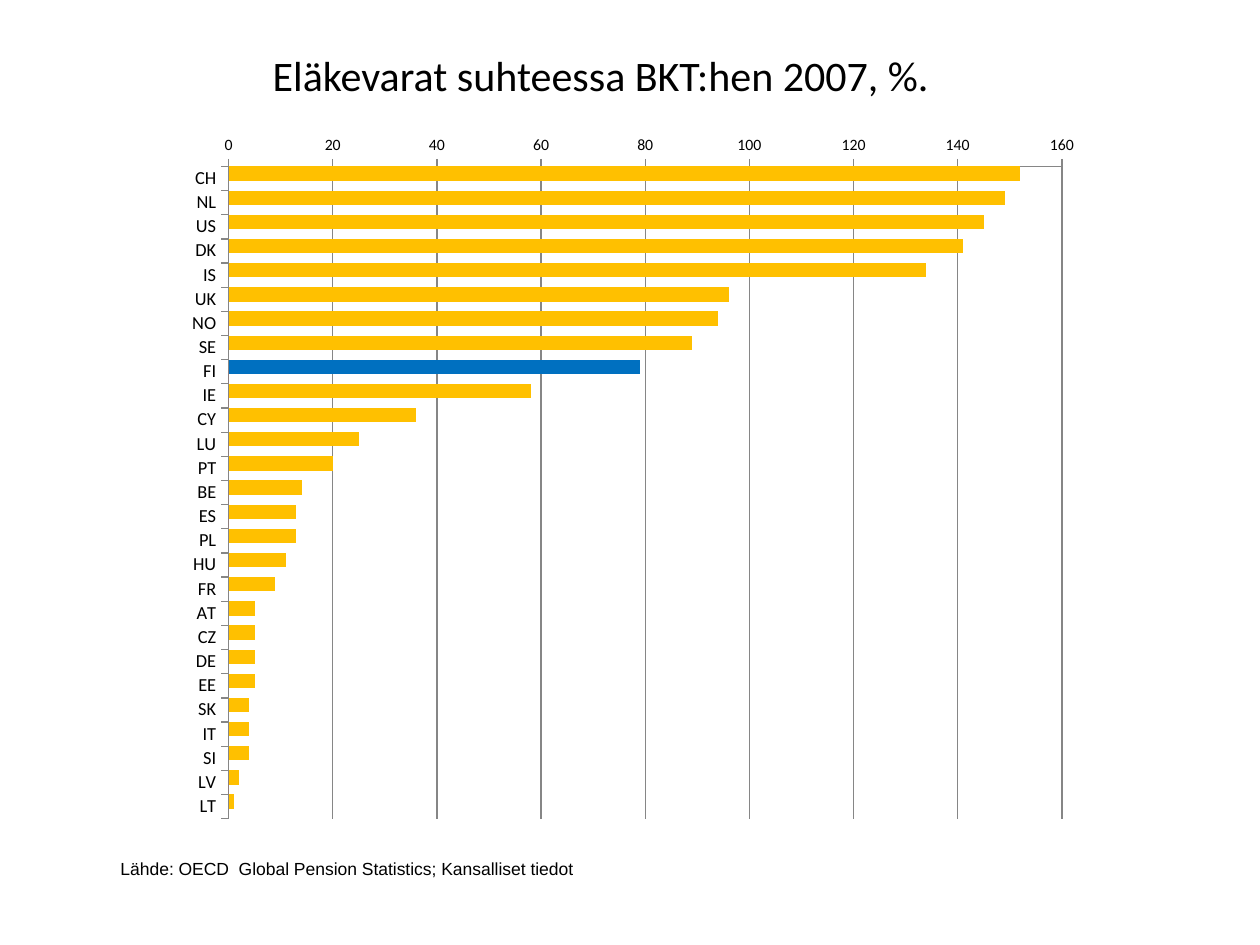
"""Build a slide that ranks pension assets relative to GDP by country."""
from dataclasses import dataclass

from lxml.etree import SubElement
from pptx import Presentation
from pptx.chart.axis import CategoryAxis, ValueAxis
from pptx.chart.chart import Chart
from pptx.chart.data import CategoryChartData
from pptx.dml.color import RGBColor
from pptx.dml.fill import FillFormat
from pptx.dml.line import LineFormat
from pptx.enum.chart import XL_CHART_TYPE as ChartType, XL_TICK_MARK as TickMark
from pptx.enum.text import MSO_ANCHOR as Anchor, PP_ALIGN as Align
from pptx.oxml.ns import qn
from pptx.slide import Slide
from pptx.text.text import Font
from pptx.util import Cm, Pt

BLACK, GREY = "000000", "868686"
GOLD, BLUE, RED = "FFC000", "0070C0", "C0504D"


@dataclass(frozen=True)
class Area:
    """Position and size in centimetres."""
    left: float
    top: float
    width: float
    height: float

    def lengths(self) -> tuple[Cm, Cm, Cm, Cm]:
        """Return the four measures as lengths."""
        return Cm(self.left), Cm(self.top), Cm(self.width), Cm(self.height)


@dataclass(frozen=True)
class Country:
    """Pension assets of one country in percent of GDP."""
    code: str
    assets: int
    second: int | None = None


COUNTRIES = [
    Country("CH", 152),
    Country("NL", 149, 0),
    Country("US", 145),
    Country("DK", 141),
    Country("IS", 134),
    Country("UK", 96),
    Country("NO", 94, 0),
    Country("SE", 89),
    Country("FI", 79, 0),
    Country("IE", 58, 0),
    Country("CY", 36),
    Country("LU", 25, 0),
    Country("PT", 20),
    Country("BE", 14, 0),
    Country("ES", 13, 0),
    Country("PL", 13),
    Country("HU", 11, 0),
    Country("FR", 9),
    Country("AT", 5),
    Country("CZ", 5),
    Country("DE", 5),
    Country("EE", 5),
    Country("SK", 4),
    Country("IT", 4),
    Country("SI", 4),
    Country("LV", 2, 0),
    Country("LT", 1),
]
HIGHLIGHTED = "FI"

HEADING_AREA = Area(1.19, 0.41, 21.84, 2.18)
SOURCE_AREA = Area(2.18, 17.17, 9.75, 0.69)
RANKING_AREA = Area(2.18, 1.98, 20.24, 15.29)
PLOT_FRACTIONS = {"x": 0.12, "y": 0.09, "w": 0.83, "h": 0.86}


def rgb(color: str) -> RGBColor:
    """Turn a hex string into a colour."""
    return RGBColor.from_string(color)


def paint(fill: FillFormat, color: str) -> None:
    """Fill with one solid colour."""
    fill.solid()
    fill.fore_color.rgb = rgb(color)


def style_line(line: LineFormat) -> None:
    """Make a chart line thin and grey."""
    line.color.rgb = rgb(GREY)
    line.width = Pt(0.75)


def style_font(font: Font, size: float, name: str = "Calibri") -> None:
    """Set the typeface, size and black colour of a font."""
    font.name, font.size = name, Pt(size)
    font.color.rgb = rgb(BLACK)


def style_axis(axis: CategoryAxis | ValueAxis, size: float) -> None:
    """Give an axis outer ticks, a grey line and labels."""
    axis.major_tick_mark = TickMark.OUTSIDE
    axis.minor_tick_mark = TickMark.NONE
    style_line(axis.format.line)
    style_font(axis.tick_labels.font, size)


def place_plot(chart: Chart, fractions: dict[str, float]) -> None:
    """Fix the inner plot area as fractions of the chart."""
    plot_area = chart.element.find(".//" + qn("c:plotArea"))
    for automatic in plot_area.findall(qn("c:layout")):
        plot_area.remove(automatic)
    layout = SubElement(plot_area, qn("c:layout"))
    plot_area.insert(0, layout)
    manual = SubElement(layout, qn("c:manualLayout"))
    modes = {"layoutTarget": "inner", "xMode": "edge", "yMode": "edge"}
    for tag, setting in (modes | fractions).items():
        SubElement(manual, qn(f"c:{tag}")).set("val", str(setting))


def add_heading(slide: Slide, wording: str) -> None:
    """Place the title in its placeholder."""
    heading = slide.shapes.title
    heading.left, heading.top, heading.width, heading.height = HEADING_AREA.lengths()
    frame = heading.text_frame
    frame.text = wording
    frame.vertical_anchor = Anchor.MIDDLE
    frame.paragraphs[0].alignment = Align.CENTER
    style_font(frame.paragraphs[0].runs[0].font, 24)


def add_source(slide: Slide, wording: str) -> None:
    """Write the data source below the chart."""
    frame = slide.shapes.add_textbox(*SOURCE_AREA.lengths()).text_frame
    frame.text = wording
    frame.word_wrap = False
    style_font(frame.paragraphs[0].runs[0].font, 10, "Arial")


def add_ranking(slide: Slide) -> None:
    """Draw the country ranking with one highlighted bar."""
    codes = [country.code for country in COUNTRIES]
    ranking = CategoryChartData()
    ranking.categories = codes
    ranking.add_series("Series 1", [country.assets for country in COUNTRIES])
    ranking.add_series("Series 2", [country.second for country in COUNTRIES])
    chart = slide.shapes.add_chart(
        ChartType.BAR_CLUSTERED, *RANKING_AREA.lengths(), ranking
    ).chart
    chart.has_legend = chart.has_title = False
    style_font(chart.font, 10)
    place_plot(chart, PLOT_FRACTIONS)

    bars = chart.plots[0]
    bars.gap_width, bars.overlap, bars.vary_by_categories = 0, 31, False
    for series, color in zip(bars.series, (GOLD, RED)):
        paint(series.format.fill, color)
        series.invert_if_negative = False
    paint(bars.series[0].points[codes.index(HIGHLIGHTED)].format.fill, BLUE)

    country_axis, percent_axis = chart.category_axis, chart.value_axis
    style_axis(country_axis, 10.5)
    country_axis.reverse_order = True
    style_axis(percent_axis, 9)
    percent_axis.minimum_scale, percent_axis.maximum_scale = 0, 160
    percent_axis.major_unit = 20
    percent_axis.has_major_gridlines = True
    style_line(percent_axis.major_gridlines.format.line)


def main() -> None:
    """Compose the slide and save it."""
    deck = Presentation()
    deck.slide_width, deck.slide_height = Cm(25.4), Cm(19.05)
    slide = deck.slides.add_slide(deck.slide_layouts.get_by_name("Title Only"))
    add_heading(slide, "Eläkevarat suhteessa BKT:hen 2007, %.")
    add_source(slide, "Lähde: OECD  Global Pension Statistics; Kansalliset tiedot")
    add_ranking(slide)
    deck.save("out.pptx")


if __name__ == "__main__":
    main()
